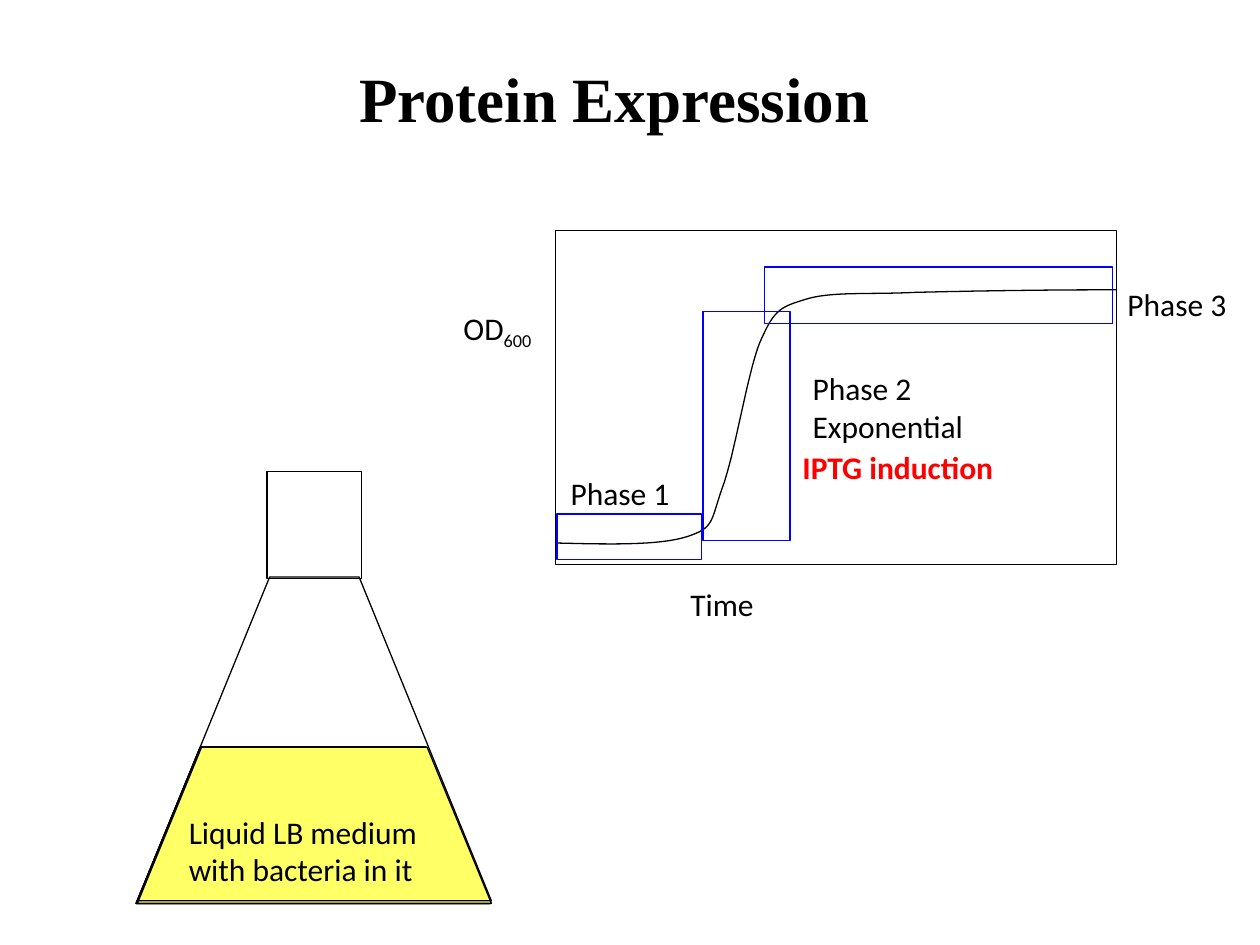
from dataclasses import dataclass

from pptx import Presentation
from pptx.dml.color import RGBColor as RGB
from pptx.enum.shapes import MSO_SHAPE as Shape
from pptx.enum.text import MSO_ANCHOR as Anchor, MSO_AUTO_SIZE as AutoSize, PP_ALIGN as Align
from pptx.util import Inches, Pt

CELL = Inches(0.1)  # the slide is a grid of 100 columns by 75 rows
COLUMNS, ROWS = 100, 75
CURVE_STEPS = 16


@dataclass(frozen=True)
class Theme:
    ink: RGB = RGB(0, 0, 0)
    phase: RGB = RGB(0, 0, 255)
    alert: RGB = RGB(255, 0, 0)
    medium: RGB = RGB(255, 255, 102)
    medium_shades: tuple = (RGB(246, 240, 0), RGB(216, 211, 0), RGB(190, 185, 0))
    title_font: str = "Times New Roman"
    body_font: str = "Calibri"
    title_size: Pt = Pt(36)
    body_size: Pt = Pt(18)
    line_width: Pt = Pt(0.75)


THEME = Theme()


def grid(*cells):
    return [round(cell * CELL) for cell in cells]


def style_shape(shape, line, fill=None):
    shape.shadow.inherit = False
    shape.line.color.rgb = line
    shape.line.width = THEME.line_width
    if fill is None:
        shape.fill.background()
    else:
        shape.fill.solid()
        shape.fill.fore_color.rgb = fill


def add_frame(shapes, box, line=THEME.ink):
    style_shape(shapes.add_shape(Shape.RECTANGLE, *grid(*box)), line)


def add_outline(shapes, points, fill=None, close=True):
    start, *rest = [grid(*point) for point in points]
    builder = shapes.build_freeform(*start)
    builder.add_line_segments(rest, close=close)
    style_shape(builder.convert_to_shape(), THEME.ink, fill)


def trapezoid(left, top, width, height, inset):
    right, bottom = left + width, top + height
    return [(left, bottom), (left + inset, top), (right - inset, top), (right, bottom)]


def bezier_points(start, segments):
    """Sample joined cubic segments, each given as two handles and an end."""
    points = [start]
    for handle_1, handle_2, end in segments:
        for step in range(1, CURVE_STEPS + 1):
            t = step / CURVE_STEPS
            u = 1 - t
            weights = (u**3, 3 * u * u * t, 3 * u * t * t, t**3)
            knots = (start, handle_1, handle_2, end)
            points.append(tuple(sum(w * k[axis] for w, k in zip(weights, knots))
                                for axis in (0, 1)))
        start = end
    return points


def set_format(target, **values):
    for name, value in values.items():
        setattr(target, name, value)


def add_label(shapes, box, *lines, color=THEME.ink, bold=False, subscript=""):
    frame = shapes.add_textbox(*grid(*box)).text_frame
    set_format(frame, word_wrap=False, auto_size=AutoSize.SHAPE_TO_FIT_TEXT)
    for index, line in enumerate(lines):
        paragraph = frame.paragraphs[0] if index == 0 else frame.add_paragraph()
        runs = [paragraph.add_run()]
        runs[0].text = line
        if subscript:
            runs.append(paragraph.add_run())
            runs[1].text = subscript
            runs[1].font._element.set("baseline", "-25000")
        for run in runs:
            set_format(run.font, name=THEME.body_font, size=THEME.body_size, bold=bold)
            run.font.color.rgb = color


def add_title(slide, box, wording):
    title = slide.shapes.title
    set_format(title, **dict(zip(("left", "top", "width", "height"), grid(*box))))
    frame = title.text_frame
    frame.text = wording
    set_format(frame, word_wrap=False, auto_size=AutoSize.NONE, vertical_anchor=Anchor.TOP)
    set_format(frame.paragraphs[0], alignment=Align.LEFT, line_spacing=1.0)
    font = frame.paragraphs[0].runs[0].font
    set_format(font, name=THEME.title_font, size=THEME.title_size, bold=True)
    font.color.rgb = THEME.ink


def add_flask(slide):
    for shade in THEME.medium_shades:
        add_outline(slide.shapes, trapezoid(10.8, 59.3, 28.1, 12.4, 5.1), shade)
    flask = slide.shapes.add_group_shape().shapes
    add_outline(flask, trapezoid(10.9, 59.3, 28.1, 12.4, 5.1), THEME.medium)
    add_outline(flask, trapezoid(10.9, 45.8, 28.1, 25.7, 10.5))
    add_frame(flask, (21.2, 37.4, 7.5, 8.5))
    add_label(slide.shapes, (14, 64, 21.7, 7), "Liquid LB medium", "with bacteria in it")


def add_growth_curve(slide):
    plot = slide.shapes.add_group_shape().shapes
    add_frame(plot, (44.1, 18.3, 44.5, 26.5))
    growth = [
        ((48.3, 43.2), (52.3, 43.3), (54.5, 42.6)),
        ((56.7, 41.9), (56.4, 41.4), (57.3, 38.8)),
        ((58.3, 36.2), (59.3, 29.7), (60.3, 27.2)),
        ((61.4, 24.7), (61.8, 24.4), (63.8, 23.8)),
        ((65.9, 23.1), (68.7, 23.4), (72.8, 23.2)),
        ((76.9, 23.1), (82.8, 23), (88.6, 23)),
    ]
    add_outline(plot, bezier_points((44.2, 43.1), growth), close=False)
    add_label(plot, (53.8, 45.9, 7.5, 4), "Time")
    add_label(plot, (35.8, 24, 8.2, 6), "OD", subscript="600")


def add_phase(slide, frame_box, label_box, *lines):
    phase = slide.shapes.add_group_shape().shapes
    add_frame(phase, frame_box, THEME.phase)
    add_label(phase, label_box, *lines)
    return phase


def main():
    deck = Presentation()
    deck.slide_width, deck.slide_height = grid(COLUMNS, ROWS)
    slide = deck.slides.add_slide(deck.slide_layouts.get_by_name("Title Only"))
    add_title(slide, (27.5, 4.2, 47.4, 7.1), "Protein Expression")
    add_flask(slide)
    add_growth_curve(slide)
    add_phase(slide, (44.2, 40.8, 11.5, 3.6), (44.3, 37.1, 10.7, 4), "Phase 1")
    add_phase(slide, (60.7, 21.2, 27.6, 4.5), (88.5, 22.1, 10.7, 4), "Phase 3")
    exponential = add_phase(slide, (55.8, 24.7, 6.9, 18.2), (63.5, 28.8, 14.1, 7.1),
                            "Phase 2", "Exponential")
    add_label(exponential, (62.7, 35.1, 17.3, 4), "IPTG induction",
              color=THEME.alert, bold=True)
    deck.save("out.pptx")


if __name__ == "__main__":
    main()
